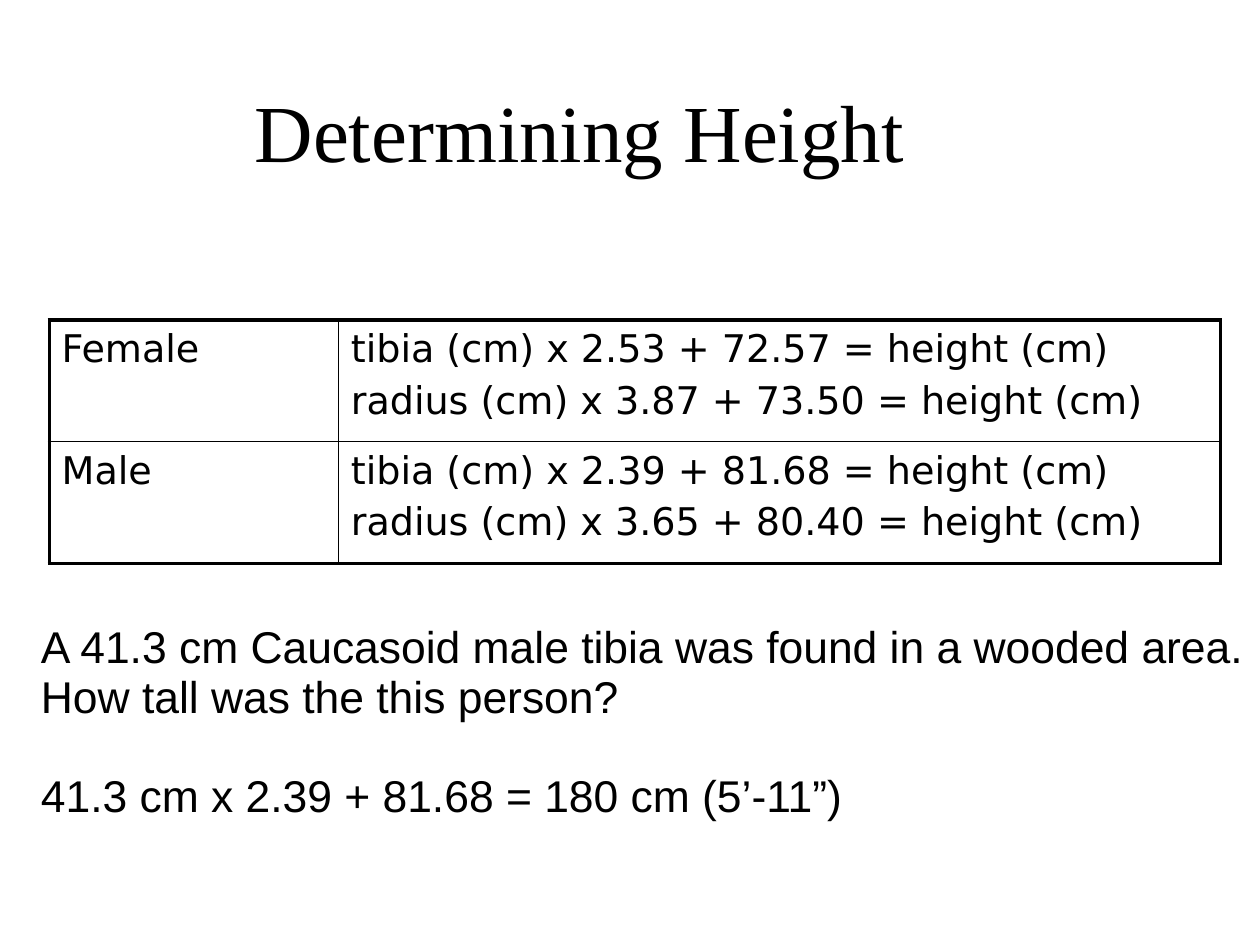
from lxml.etree import SubElement
from pptx import Presentation
from pptx.dml.color import RGBColor
from pptx.enum.text import MSO_ANCHOR, PP_ALIGN
from pptx.oxml.ns import qn
from pptx.util import Cm, Inches, Pt

BLACK = "000000"
TITLE_FONT = {"name": "Times New Roman", "size": Pt(51)}
TABLE_FONT = {"name": "DejaVu Sans", "size": Pt(24)}
BODY_FONT = {"name": "Arial", "size": Pt(28)}
FORMULAS = [
    ("Female", ["tibia (cm) x 2.53 + 72.57 = height (cm)",
                "radius (cm) x 3.87 + 73.50 = height (cm)"]),
    ("Male", ["tibia (cm) x 2.39 + 81.68 = height (cm)",
              "radius (cm) x 3.65 + 80.40 = height (cm)"]),
]
QUESTION = ["A 41.3 cm Caucasoid male tibia was found in a wooded area.",
            "How tall was the this person?"]
ANSWER = "41.3 cm x 2.39 + 81.68 = 180 cm (5’-11”)"


def color(value):
    return RGBColor.from_string(value)


def set_margins(target):
    for side, width in {"left": 0.11, "top": 0.06, "right": 0.11, "bottom": 0.06}.items():
        setattr(target, f"margin_{side}", Inches(width))


def write_lines(tf, lines, font, **paragraph_format):
    for i, line in enumerate(lines):
        p = tf.paragraphs[0] if i == 0 else tf.add_paragraph()
        r = p.add_run()
        r.text = line
        for name, value in font.items():
            setattr(r.font, name, value)
        r.font.color.rgb = color(BLACK)
        for name, value in paragraph_format.items():
            if i or name != "space_before":
                setattr(p, name, value)


def add_text(s, box, lines, font, **paragraph_format):
    tf = s.shapes.add_textbox(*map(Inches, box)).text_frame
    tf.word_wrap = True
    write_lines(tf, lines, font, **paragraph_format)
    return tf


def set_borders(cell, widths):
    """Draw black borders; widths gives points for left, right, top, bottom."""
    tc_pr = cell._tc.get_or_add_tcPr()
    for i, (side, width) in enumerate(zip("LRTB", widths)):
        ln = SubElement(tc_pr, qn(f"a:ln{side}"), w=str(Pt(width)))
        fill = SubElement(ln, qn("a:solidFill"))
        SubElement(fill, qn("a:srgbClr"), val=BLACK)
        tc_pr.remove(ln)
        tc_pr.insert(i, ln)


def add_formula_table(s):
    outer, inner = 2.25, 1
    box = map(Inches, (0.43, 2.8, 10.25, 2.13))
    table = s.shapes.add_table(len(FORMULAS), 2, *box).table
    table.first_row = table.horz_banding = False
    for column, width in zip(table.columns, (2.53, 7.72)):
        column.width = Inches(width)
    last = len(FORMULAS) - 1
    for i, (sex, formulas) in enumerate(FORMULAS):
        for j, lines in enumerate(([sex], formulas)):
            cell = table.cell(i, j)
            cell.fill.background()
            set_margins(cell)
            write_lines(cell.text_frame, lines, TABLE_FONT, space_before=Pt(4.8))
            edges = (j == 0, j == 1, i == 0, i == last)
            set_borders(cell, [outer if edge else inner for edge in edges])


def main():
    prs = Presentation()
    prs.slide_width, prs.slide_height = Cm(28), Cm(21)
    s = prs.slides.add_slide(prs.slide_layouts[6])
    title = add_text(s, (0.66, 0.61, 8.82, 1.05), ["Determining Height"],
                     TITLE_FONT, alignment=PP_ALIGN.CENTER)
    title.vertical_anchor = MSO_ANCHOR.MIDDLE
    set_margins(title)
    add_formula_table(s)
    body = add_text(s, (0.26, 5.41, 10.76, 2.42), QUESTION + [ANSWER],
                    BODY_FONT, line_spacing=0.93)
    body.paragraphs[-1].space_before = Pt(31)
    prs.save("out.pptx")


if __name__ == "__main__":
    main()
